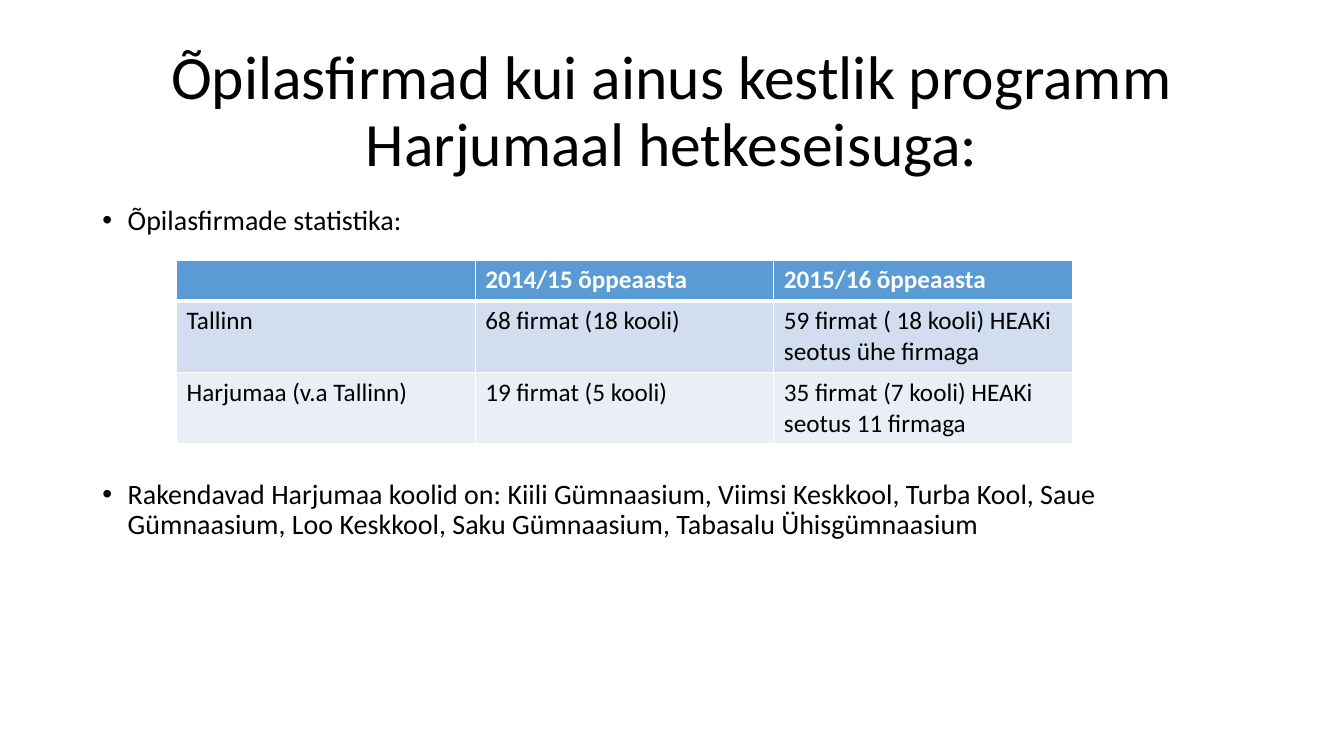
"""Build the slide on student companies in Harjumaa."""
import dataclasses

import pptx
import pptx.dml.color
import pptx.enum.text
import pptx.oxml
import pptx.oxml.ns
import pptx.util

Cm = pptx.util.Cm
Pt = pptx.util.Pt
Align = pptx.enum.text.PP_ALIGN
Anchor = pptx.enum.text.MSO_ANCHOR


@dataclasses.dataclass(frozen=True)
class Theme:
    font: str = "Calibri"
    text: str = "000000"
    light: str = "FFFFFF"
    header: str = "5B9BD5"
    bands: tuple = ("D2DEEF", "EAEFF7")
    title_size: int = 44
    body_size: int = 20
    table_size: int = 18
    line_spacing: float = 0.9
    border: int = 1
    header_border: int = 3


def apply(target, values):
    for name, value in values.items():
        setattr(target, name, value)


def rgb(colour):
    return pptx.dml.color.RGBColor.from_string(colour)


class SlideBuilder:
    def __init__(self, slide, theme):
        self.slide = slide
        self.theme = theme

    def style_font(self, paragraph, size, colour, bold=False):
        apply(paragraph.font, {"name": self.theme.font, "size": Pt(size), "bold": bold})
        paragraph.font.color.rgb = rgb(colour)

    def add_frame(self, box, anchor):
        shape = self.slide.shapes.add_textbox(*map(Cm, box))
        apply(shape.text_frame, {"word_wrap": True, "vertical_anchor": anchor})
        return shape.text_frame

    def add_title(self, text, box):
        paragraph = self.add_frame(box, Anchor.MIDDLE).paragraphs[0]
        apply(paragraph, {"text": text, "alignment": Align.CENTER,
                          "line_spacing": self.theme.line_spacing})
        self.style_font(paragraph, self.theme.title_size, self.theme.text)

    def add_bullets(self, texts, box, gap):
        frame = self.add_frame(box, Anchor.TOP)
        for index, text in enumerate(texts):
            paragraph = frame.add_paragraph() if index else frame.paragraphs[0]
            apply(paragraph, {"text": text, "line_spacing": self.theme.line_spacing,
                              "space_before": Pt(gap if index else 0)})
            properties = paragraph._p.get_or_add_pPr()
            indent = Cm(0.64)
            properties.set("marL", str(indent))
            properties.set("indent", str(-indent))
            namespace = pptx.oxml.ns.nsdecls("a")
            for xml in (f'<a:buFont {namespace} typeface="Arial"/>',
                        f'<a:buChar {namespace} char="•"/>'):
                properties.append(pptx.oxml.parse_xml(xml))
            self.style_font(paragraph, self.theme.body_size, self.theme.text)

    def add_borders(self, cell, widths):
        properties = cell._tc.get_or_add_tcPr()
        for side, width in widths.items():
            properties.append(pptx.oxml.parse_xml(
                f'<a:ln{side} {pptx.oxml.ns.nsdecls("a")} w="{Pt(width)}"><a:solidFill>'
                f'<a:srgbClr val="{self.theme.light}"/></a:solidFill></a:ln{side}>'))

    def add_table(self, rows, box, heights):
        theme = self.theme
        shape = self.slide.shapes.add_table(len(rows), len(rows[0]), *map(Cm, box))
        table = shape.table
        for row_index, (texts, height) in enumerate(zip(rows, heights)):
            table.rows[row_index].height = Cm(height)
            is_header = row_index == 0
            fill = theme.header if is_header else theme.bands[(row_index - 1) % 2]
            widths = {"L": theme.border, "R": theme.border,
                      "T": theme.header_border if row_index == 1 else theme.border,
                      "B": theme.header_border if is_header else theme.border}
            for column_index, text in enumerate(texts):
                cell = table.cell(row_index, column_index)
                self.add_borders(cell, widths)
                cell.fill.solid()
                cell.fill.fore_color.rgb = rgb(fill)
                cell.text = text
                self.style_font(cell.text_frame.paragraphs[0], theme.table_size,
                                theme.light if is_header else theme.text, is_header)


def main():
    presentation = pptx.Presentation()
    apply(presentation, {"slide_width": Cm(33.87), "slide_height": Cm(19.05)})
    slide = presentation.slides.add_slide(presentation.slide_layouts[6])
    builder = SlideBuilder(slide, Theme())
    builder.add_title("Õpilasfirmad kui ainus kestlik programm Harjumaal hetkeseisuga:",
                      (2.33, 1.01, 29.21, 3.68))
    builder.add_bullets(
        ["Õpilasfirmade statistika:",
         "Rakendavad Harjumaa koolid on: Kiili Gümnaasium, Viimsi Keskkool, Turba Kool, "
         "Saue Gümnaasium, Loo Keskkool, Saku Gümnaasium, Tabasalu Ühisgümnaasium"],
        (2.33, 5.07, 29.21, 12.09), gap=174)
    builder.add_table(
        [["", "2014/15 õppeaasta", "2015/16 õppeaasta"],
         ["Tallinn", "68 firmat (18 kooli)",
          "59 firmat ( 18 kooli) HEAKi seotus ühe firmaga"],
         ["Harjumaa (v.a Tallinn)", "19 firmat (5 kooli)",
          "35 firmat (7 kooli) HEAKi seotus 11 firmaga"]],
        (4.45, 6.55, 22.58, 4.63), heights=(1.03, 1.8, 1.8))
    presentation.save("out.pptx")


if __name__ == "__main__":
    main()
